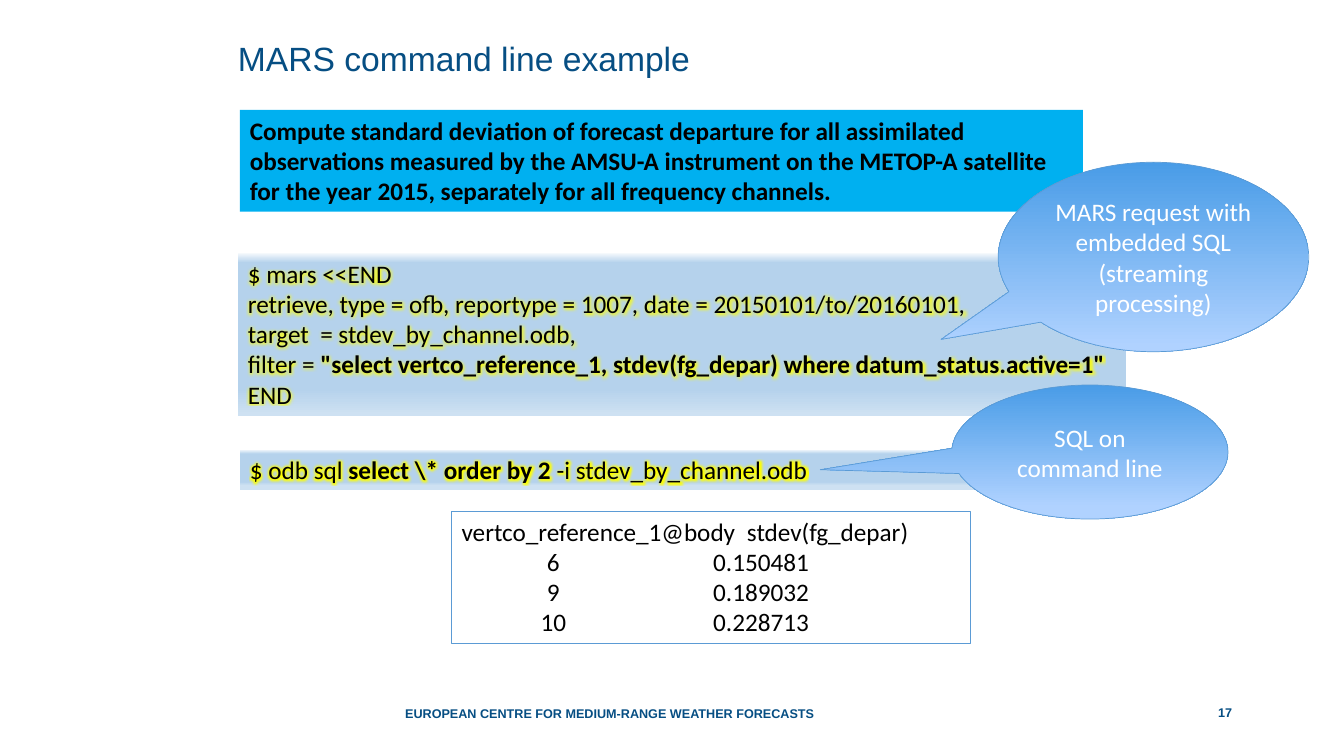
"""Build the slide with the MARS command line example."""
from dataclasses import dataclass
from typing import Any

import pptx
import pptx.dml.color
import pptx.enum.shapes
import pptx.enum.text
import pptx.oxml
import pptx.oxml.ns
import pptx.util

Inches = pptx.util.Inches
Pt = pptx.util.Pt
RGBColor = pptx.dml.color.RGBColor
MSO_SHAPE = pptx.enum.shapes.MSO_SHAPE
MSO_ANCHOR = pptx.enum.text.MSO_ANCHOR
PP_ALIGN = pptx.enum.text.PP_ALIGN
qn = pptx.oxml.ns.qn
NS = pptx.oxml.ns.nsdecls("a")

NAVY = RGBColor(0x06, 0x4E, 0x83)
CYAN = RGBColor(0x00, 0xB0, 0xF0)
BLUE = RGBColor(0x5B, 0x9B, 0xD5)
BLACK = RGBColor(0x00, 0x00, 0x00)
WHITE = RGBColor(0xFF, 0xFF, 0xFF)
YELLOW = RGBColor(0xFF, 0xFF, 0x00)
PALE = RGBColor(0xF7, 0xFA, 0xFD)
SKY = RGBColor(0xB5, 0xD2, 0xEC)
MIST = RGBColor(0xCE, 0xE1, 0xF2)
BALLOON_TOP = RGBColor(0x49, 0x9C, 0xE7)
BALLOON_END = RGBColor(0xB0, 0xD2, 0xFF)

Rect = tuple[float, float, float, float]
Stops = list[tuple[int, RGBColor]]
Runs = list[tuple[str, bool]]


@dataclass
class Panel:
    """A rectangle with left-aligned text."""
    rect: Rect
    fill: RGBColor | Stops
    paragraphs: list[Runs]
    line: RGBColor | None = None
    glow: bool = False
    tabs: list[list[tuple[float, str]]] | None = None


@dataclass
class Callout:
    """An elliptical speech balloon."""
    rect: Rect
    tail: tuple[float, float]
    end: int
    lines: list[str]


PANELS = [
    Panel((2.38, 1.09, 8.36, 1.01), CYAN, [[(
        "Compute standard deviation of forecast departure for all assimilated "
        "observations measured by the AMSU-A instrument on the METOP-A satellite "
        "for the year 2015, separately for all frequency channels.", True)]]),
    Panel((2.36, 2.51, 8.81, 1.62), [(0, PALE), (6, SKY), (83, SKY), (99, MIST)], [
        [("$ mars <<END", False)],
        [("retrieve, type = ofb, reportype = 1007, date = 20150101/to/20160101,", False)],
        [("target  = stdev_by_channel.odb,\nfilter = ", False),
         ('"select vertco_reference_1, stdev(fg_depar) where datum_status.active=1"\n', True),
         ("END", False)],
    ], glow=True),
    Panel((2.38, 4.46, 8.58, 0.4), [(0, PALE), (11, SKY), (81, SKY), (89, MIST)], [
        [("$ odb sql ", False), ("select \\* order by 2 ", True),
         ("-i stdev_by_channel.odb", False)],
    ], glow=True),
    Panel((4.48, 5.07, 5.15, 1.31), WHITE, [
        [("vertco_reference_1@body\tstdev(fg_depar)", False)],
        [("\t6\t0.150481", False)],
        [("\t9\t0.189032", False)],
        [("\t10\t0.228713", False)],
    ], line=BLUE, tabs=[[(2.83, "l")]] + [[(0.91, "ctr"), (2.97, "ctr")]] * 3),
]

CALLOUTS = [
    Callout((9.9, 1.61, 3.08, 1.88), (-0.684, 0.435), 97,
            ["MARS request with embedded SQL", "(streaming processing)"]),
    Callout((9.44, 3.82, 2.74, 1.33), (-0.976, 0.132), 91, ["SQL on command line"]),
]


def add_text(p: Any, text: str, *, size: float = 18, font: str = "Calibri",
             color: RGBColor = BLACK, bold: bool = False, glow: bool = False) -> None:
    """Append formatted text to a paragraph, breaking lines at newlines."""
    for i, part in enumerate(text.split("\n")):
        if i:
            p.add_line_break()
        if not part:
            continue
        r = p.add_run()
        r.text = part
        r.font.size, r.font.bold, r.font.name = Pt(size), bold, font
        r.font.color.rgb = color
        if glow:
            effect = pptx.oxml.parse_xml(
                f'<a:effectLst {NS}><a:glow rad="{Pt(5)}">'
                f'<a:srgbClr val="{YELLOW}"/></a:glow></a:effectLst>')
            r.font.fill
            r._r.rPr.find(qn("a:latin")).addprevious(effect)


def set_tabs(p: Any, tabs: list[tuple[float, str]]) -> None:
    """Give a paragraph its tab stops."""
    stops = "".join(f'<a:tab pos="{Inches(pos)}" algn="{align}"/>' for pos, align in tabs)
    p._p.get_or_add_pPr().append(pptx.oxml.parse_xml(f"<a:tabLst {NS}>{stops}</a:tabLst>"))


def set_gradient(sp: Any, stops: Stops) -> None:
    """Fill a shape with a gradient running from top to bottom."""
    gs = "".join(f'<a:gs pos="{pos * 1000}"><a:srgbClr val="{color}"/></a:gs>'
                 for pos, color in stops)
    sp._element.spPr.find(qn("a:prstGeom")).addnext(pptx.oxml.parse_xml(
        f'<a:gradFill {NS} rotWithShape="1"><a:gsLst>{gs}</a:gsLst>'
        '<a:lin ang="5400000" scaled="0"/></a:gradFill>'))


def add_shape(s: Any, kind: Any, rect: Rect, fill: RGBColor | Stops,
              line: RGBColor | None, width: float, anchor: Any) -> Any:
    """Draw a filled shape with wrapped text."""
    sp = s.shapes.add_shape(kind, *map(Inches, rect))
    sp.shadow.inherit = False
    if isinstance(fill, RGBColor):
        sp.fill.solid()
        sp.fill.fore_color.rgb = fill
    else:
        set_gradient(sp, fill)
    if line is None:
        sp.line.fill.background()
    else:
        sp.line.color.rgb = line
        sp.line.width = Pt(width)
    sp.text_frame.word_wrap = True
    sp.text_frame.vertical_anchor = anchor
    return sp


def next_paragraph(tf: Any, i: int) -> Any:
    """Return the first paragraph or a newly added one."""
    return tf.add_paragraph() if i else tf.paragraphs[0]


def add_panel(s: Any, panel: Panel) -> None:
    """Draw a text panel."""
    sp = add_shape(s, MSO_SHAPE.RECTANGLE, panel.rect, panel.fill, panel.line, 0.75,
                   MSO_ANCHOR.TOP)
    for i, runs in enumerate(panel.paragraphs):
        p = next_paragraph(sp.text_frame, i)
        p.alignment = PP_ALIGN.LEFT
        if panel.tabs:
            set_tabs(p, panel.tabs[i])
        for text, bold in runs:
            add_text(p, text, bold=bold, glow=panel.glow)


def add_callout(s: Any, callout: Callout) -> None:
    """Draw a speech balloon."""
    sp = add_shape(s, MSO_SHAPE.OVAL_CALLOUT, callout.rect,
                   [(0, BALLOON_TOP), (callout.end, BALLOON_END)], BLUE, 0.5,
                   MSO_ANCHOR.MIDDLE)
    sp.adjustments[0], sp.adjustments[1] = callout.tail
    for i, line in enumerate(callout.lines):
        p = next_paragraph(sp.text_frame, i)
        p.alignment = PP_ALIGN.CENTER
        add_text(p, line, color=WHITE)


def clear_margins(tf: Any, anchor: Any) -> None:
    """Remove the insets of a text frame and anchor it."""
    tf.margin_left = tf.margin_right = tf.margin_top = tf.margin_bottom = 0
    tf.word_wrap = True
    tf.vertical_anchor = anchor


def add_footer(s: Any, rect: Rect, text: str) -> None:
    """Write a centred footer label."""
    tf = s.shapes.add_textbox(*map(Inches, rect)).text_frame
    clear_margins(tf, MSO_ANCHOR.BOTTOM)
    tf.paragraphs[0].alignment = PP_ALIGN.CENTER
    add_text(tf.paragraphs[0], text, size=9, font="Arial", color=NAVY, bold=True)


def main() -> None:
    """Build and save the presentation."""
    prs = pptx.Presentation()
    prs.slide_width, prs.slide_height = Inches(13.33), Inches(7.5)
    s = prs.slides.add_slide(prs.slide_layouts[5])
    title = s.shapes.title
    title.left, title.top, title.width, title.height = map(Inches, (2.36, 0.39, 8.61, 0.4))
    clear_margins(title.text_frame, MSO_ANCHOR.TOP)
    p = title.text_frame.paragraphs[0]
    p.alignment, p.line_spacing = PP_ALIGN.LEFT, Pt(28)
    add_text(p, "MARS command line example", size=24, font="Arial", color=NAVY)
    add_footer(s, (10.97, 6.9, 2.36, 0.24), "17")
    add_footer(s, (3.83, 6.9, 4.43, 0.25), "EUROPEAN CENTRE FOR MEDIUM-RANGE WEATHER FORECASTS")
    for panel in PANELS:
        add_panel(s, panel)
    for callout in CALLOUTS:
        add_callout(s, callout)
    prs.save("out.pptx")


if __name__ == "__main__":
    main()
